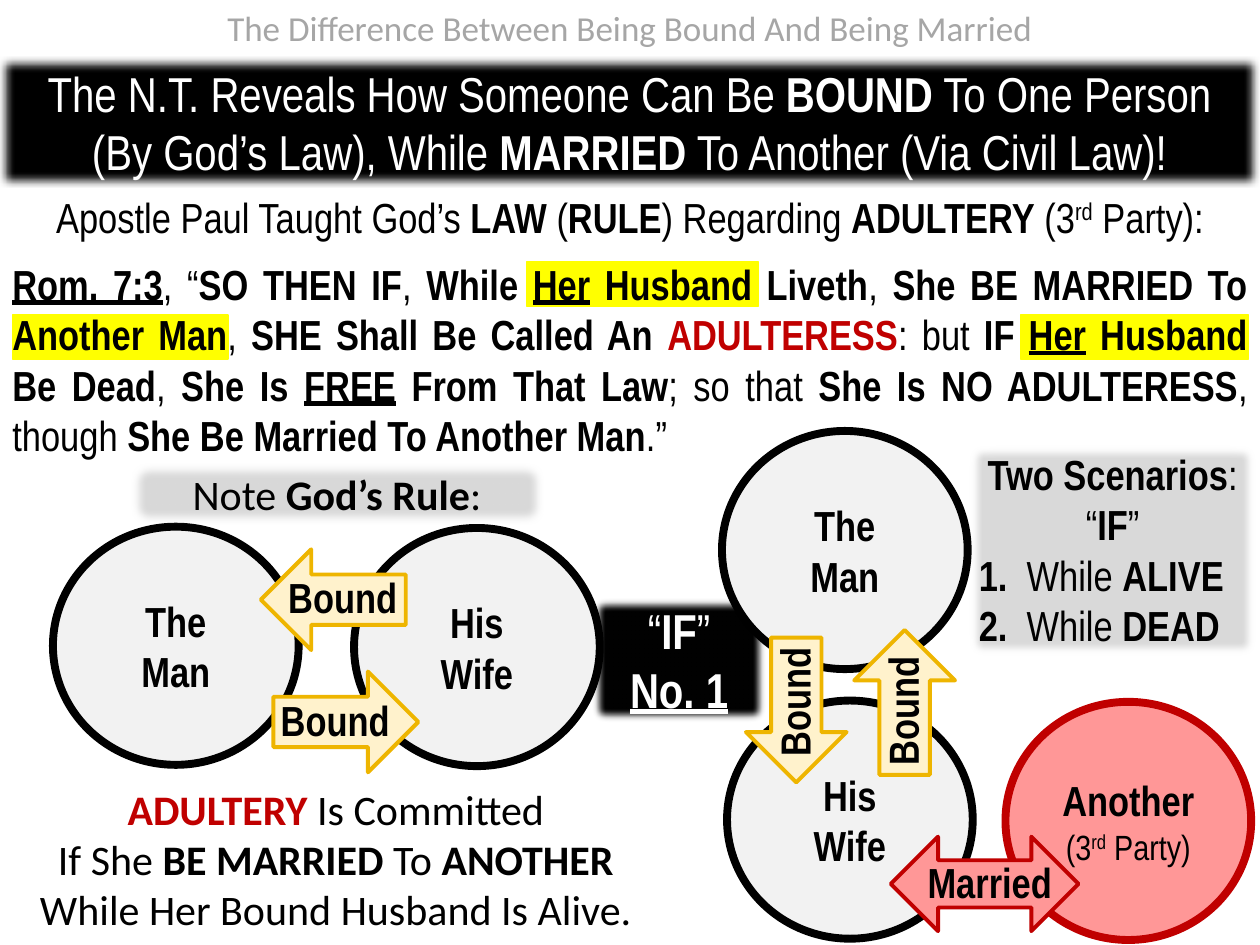
from lxml.etree import SubElement
from pptx import Presentation
from pptx.dml.color import RGBColor
from pptx.enum.shapes import MSO_SHAPE as Shape
from pptx.enum.text import MSO_ANCHOR as Anchor, PP_ALIGN as Align
from pptx.oxml.ns import qn
from pptx.util import Inches, Pt

NARROW, CALIBRI = "Arial Narrow", "Calibri"
BLACK, WHITE, GRAY, PALE, RED = "000000", "FFFFFF", "D9D9D9", "F2F2F2", "C00000"
PINK, CREAM, GOLD, YELLOW = "FF9797", "FFF2CC", "EEB500", "FFFF00"
MARKS = "*_^~<"  # bold, underline, superscript, red, small

HEADER = "The Difference Between Being Bound And Being Married"
TITLE = ("The N.T. Reveals How Someone Can Be *BOUND* To One Person\n"
         "(By God’s Law), While *MARRIED* To Another (Via Civil Law)!")
LEAD = "Apostle Paul Taught God’s *LAW* (*RULE*) Regarding *ADULTERY* (3^rd^ Party):"
VERSE = ("*_Rom. 7:3_*, “*SO THEN IF*, *While _Her_ Husband Liveth*, "
         "*She BE MARRIED To Another Man*, *SHE Shall Be Called An ~ADULTERESS~*: but "
         "*IF _Her_ Husband Be Dead*, *She Is _FREE_ From That Law*; so that "
         "*She Is NO ADULTERESS*, though *She Be Married To Another Man*.”")
RULE = "Note *God’s Rule*:"
ADULTERY = ("*~ADULTERY~* Is Committed\nIf She *BE MARRIED* To *ANOTHER*\n"
            "While Her Bound Husband Is Alive.")
CASE = ["“*IF*”", "*_No. 1_*"]
SCENARIOS = ["*Two Scenarios*:\n“*IF*”", "*1.*\tWhile *ALIVE*", "*2.*\tWhile *DEAD*"]
PEOPLE = [
    ("*The\nMan*", 0.42, 4.18, PALE, BLACK),
    ("*His\nWife*", 2.81, 4.19, PALE, BLACK),
    ("*Another*\n<(3^rd^ Party)<", 7.98, 5.57, PINK, RED),
    ("*The\nMan*", 5.73, 3.42, PALE, BLACK),
    ("*His\nWife*", 5.77, 5.56, PALE, BLACK),
]
HIGHLIGHTS = [(0.1, 2.5, 1.71), (4.18, 2.08, 1.84), (8.1, 2.5, 1.81)]
ARROWS = [
    (Shape.UP_ARROW, (6.78, 5, 0.8, 1.15), CREAM, GOLD),
    (Shape.DOWN_ARROW, (5.92, 5.06, 0.8, 1.15), CREAM, GOLD),
    (Shape.RIGHT_ARROW, (2.17, 5.33, 1.15, 0.8), CREAM, GOLD),
    (Shape.LEFT_ARROW, (2.07, 4.36, 1.15, 0.8), CREAM, GOLD),
    (Shape.LEFT_RIGHT_ARROW, (7.07, 6.64, 1.49, 0.75), PINK, RED),
]
TIES = [
    ("*Bound*", (5.8, 5.39, 2.72, 0.5), 270),
    ("*Bound*", (4.94, 5.32, 2.72, 0.5), 270),
    ("*Bound*", (1.3, 5.46, 2.72, 0.5), 0),
    ("*Bound*", (1.36, 4.49, 2.72, 0.5), 0),
    ("*Married*", (7.08, 6.75, 1.55, 0.5), 0),
]


def rgb(code):
    return RGBColor.from_string(code)


def split_marks(text):
    active, piece = set(), ""
    for char in text:
        if char in MARKS or char == "\n":
            if piece:
                yield piece, set(active)
            piece = ""
            if char == "\n":
                yield char, set()
            else:
                active ^= {char}
        else:
            piece += char
    if piece:
        yield piece, active


def write(shape, text, size=24, font=NARROW, color=BLACK, align=Align.CENTER,
          anchor=Anchor.TOP):
    frame = shape.text_frame
    frame.word_wrap, frame.vertical_anchor = True, anchor
    for index, line in enumerate([text] if isinstance(text, str) else text):
        paragraph = frame.add_paragraph() if index else frame.paragraphs[0]
        paragraph.alignment = align
        if "\t" in line:
            paragraph.alignment = Align.LEFT
            props = paragraph._p.get_or_add_pPr()
            props.set("marL", str(Inches(0.38)))
            props.set("indent", str(-Inches(0.38)))
        for piece, marks in split_marks(line):
            if piece == "\n":
                paragraph.add_line_break()
                continue
            run = paragraph.add_run()
            run.text = piece
            run.font.name, run.font.size = font, Pt(20 if "<" in marks else size)
            run.font.bold, run.font.underline = "*" in marks, "_" in marks
            run.font.color.rgb = rgb(RED if "~" in marks else color)
            if "^" in marks:
                run._r.get_or_add_rPr().set("baseline", "30000")


def paint(shape, fill=None, line=None, width=1):
    if fill:
        shape.fill.solid()
        shape.fill.fore_color.rgb = rgb(fill)
    else:
        shape.fill.background()
    if line:
        shape.line.color.rgb = rgb(line)
        shape.line.width = Pt(width)
    else:
        shape.line.fill.background()


def soften(shape):
    shape.shadow.inherit = False
    effects = shape._element.spPr.find(qn("a:effectLst"))
    SubElement(effects, qn("a:softEdge")).set("rad", str(Pt(5)))


def build():
    """Build the slide on being bound and being married."""
    deck = Presentation()
    deck.slide_width, deck.slide_height = Inches(10), Inches(7.5)
    slide = deck.slides.add_slide(deck.slide_layouts[5])

    def add_shape(kind, box, **look):
        shape = slide.shapes.add_shape(kind, *map(Inches, box))
        shape.shadow.inherit = False
        paint(shape, **look)
        return shape

    def add_text(text, box, rotation=0, **style):
        label = slide.shapes.add_textbox(*map(Inches, box))
        label.rotation = rotation
        write(label, text, **style)

    title = slide.shapes.title
    title.left, title.top, title.width, title.height = map(Inches, (-0.01, 0.45, 10.01, 1.04))
    paint(title, BLACK)
    soften(title)
    write(title, TITLE, size=28, color=WHITE)

    case = add_shape(Shape.RECTANGLE, (4.67, 4.72, 1.44, 1.04), fill=BLACK)
    soften(case)
    write(case, CASE, size=28, color=WHITE)
    add_text(HEADER, (0, 0, 10, 0.44), size=20, font=CALIBRI, color="A6A6A6")
    add_text(LEAD, (0, 1.47, 10, 0.5))

    for name, left, top, fill, line in PEOPLE:
        person = add_shape(Shape.OVAL, (left, top, 1.95, 1.89), fill=fill, line=line, width=4.5)
        write(person, name, anchor=Anchor.MIDDLE)

    adultery = add_shape(Shape.ROUNDED_RECTANGLE, (-0.01, 6.1, 5.35, 1.43))
    write(adultery, ADULTERY, font=CALIBRI, anchor=Anchor.MIDDLE)
    scenarios = add_shape(Shape.RECTANGLE, (7.67, 3.51, 2.32, 1.72), fill=GRAY)
    soften(scenarios)
    write(scenarios, SCENARIOS)
    for left, top, width in HIGHLIGHTS:
        add_shape(Shape.RECTANGLE, (left, top, width, 0.35), fill=YELLOW, line=YELLOW)
    rule = add_shape(Shape.ROUNDED_RECTANGLE, (1.04, 3.68, 3.27, 0.48), fill=GRAY)
    soften(rule)
    write(rule, RULE, font=CALIBRI, anchor=Anchor.MIDDLE)

    for kind, box, fill, line in ARROWS:
        add_shape(kind, box, fill=fill, line=line, width=2.25)
    for word, box, rotation in TIES:
        add_text(word, box, rotation)
    add_text(VERSE, (0, 2, 10, 1.72), align=Align.JUSTIFY)
    deck.save("out.pptx")


if __name__ == "__main__":
    build()
